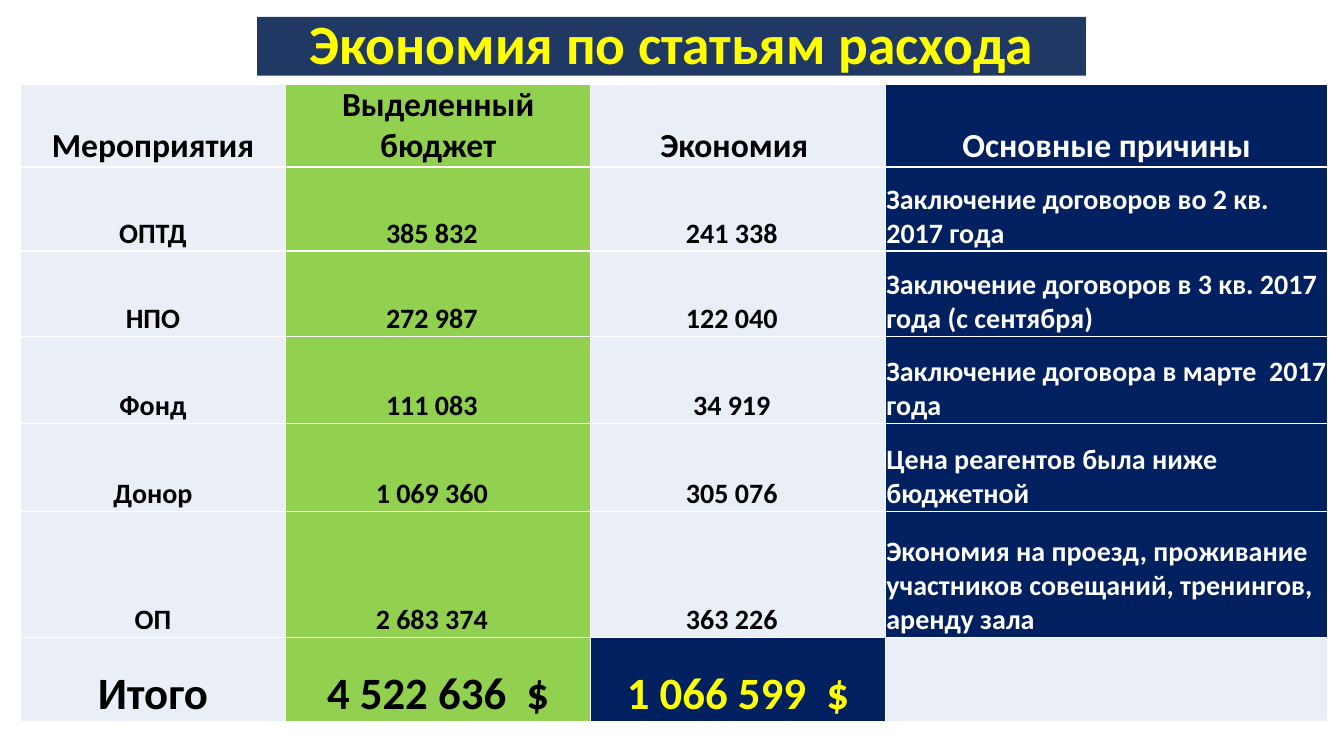
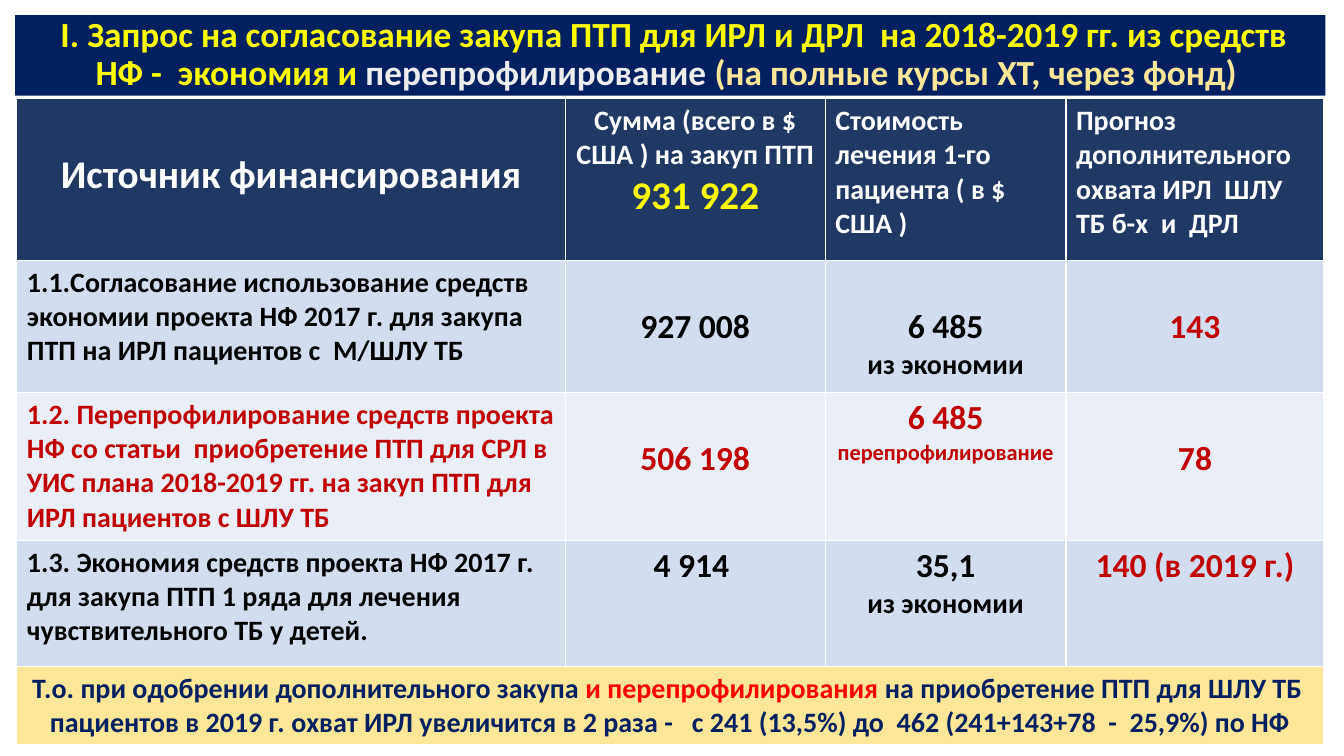
from pptx import Presentation
from pptx.dml.color import RGBColor
from pptx.enum.text import MSO_ANCHOR, MSO_AUTO_SIZE, PP_ALIGN
from pptx.util import Pt


class Theme:
    font = "Calibri"
    navy, slate = "002060", "203864"
    pale, mist = "EAEFF7", "D2DEEF"
    green, sand = "92D050", "FFE699"
    white, grey, black = "FFFFFF", "EDEDED", "000000"
    yellow, red, bright = "FFFF00", "C00000", "FF0000"
    title, long = 39.6, 25.2
    total, large, head, body, small = 32, 28, 24, 20, 16


LEFT, MID = PP_ALIGN.LEFT, PP_ALIGN.CENTER


def write(frame, paras, align):
    for i, runs in enumerate(paras):
        para = frame.paragraphs[0] if i == 0 else frame.add_paragraph()
        para.alignment = align
        for text, size, color in runs:
            run = para.add_run()
            run.text = text
            run.font.name = Theme.font
            run.font.size = Pt(size)
            run.font.bold = True
            run.font.color.rgb = RGBColor.from_string(color)


def build(box, fill, runs, spot, cols, rows):
    slide = deck.slides.add_slide(deck.slide_layouts[5])
    title = slide.shapes.title
    title.left, title.top, title.width, title.height = map(Pt, box)
    title.fill.solid()
    title.fill.fore_color.rgb = RGBColor.from_string(fill)
    frame = title.text_frame
    frame.auto_size = MSO_AUTO_SIZE.NONE
    frame.word_wrap = True
    frame.vertical_anchor = MSO_ANCHOR.MIDDLE
    write(frame, [runs], MID)
    frame.paragraphs[0].line_spacing = 0.9
    area = [*spot, sum(cols), sum(rows)]
    table = slide.shapes.add_table(len(rows), len(cols), *map(Pt, area)).table
    table.horz_banding = False
    for col, width in zip(table.columns, cols):
        col.width = Pt(width)
    for row, height in zip(table.rows, rows):
        row.height = Pt(height)
    return table


deck = Presentation()
deck.slide_width, deck.slide_height = Pt(960), Pt(540)

savings = build(
    (183.6, 12, 592, 42), Theme.slate,
    [("Экономия по статьям расхода", Theme.title, Theme.yellow)],
    (14.5, 60), (189.5, 218, 210.5, 316), (59, 60, 61, 62, 63, 90, 60))
savings.first_row = False

lines = [
    ("Мероприятия", "Выделенный бюджет", "Экономия", "Основные причины"),
    ("ОПТД", "385 832", "241 338", "Заключение договоров во 2 кв. 2017 года"),
    ("НПО", "272 987", "122 040",
     "Заключение договоров в 3 кв. 2017 года (с сентября)"),
    ("Фонд", "111 083", "34 919", "Заключение договора в марте  2017 года"),
    ("Донор", "1 069 360", "305 076", "Цена реагентов была ниже бюджетной"),
    ("ОП", "2 683 374", "363 226",
     "Экономия на проезд, проживание участников совещаний, тренингов, "
     "аренду зала"),
    ("Итого", "4 522 636  $", "1 066 599  $", ""),
]
fills = (Theme.pale, Theme.green, Theme.pale, Theme.navy)
inks = (Theme.black, Theme.black, Theme.black, Theme.white)
last = len(lines) - 1
for r, line in enumerate(lines):
    size = {0: Theme.head, last: Theme.total}.get(r, Theme.body)
    for c, text in enumerate(line):
        fill, ink = fills[c], inks[c]
        if r == last and c == 2:
            fill, ink = Theme.navy, Theme.yellow
        elif r == last and c == 3:
            fill = Theme.pale
        cell = savings.cell(r, c)
        cell.fill.solid()
        cell.fill.fore_color.rgb = RGBColor.from_string(fill)
        cell.vertical_anchor = MSO_ANCHOR.BOTTOM
        cell.margin_left = cell.margin_top = Pt(0.7)
        cell.margin_right = Pt(9.7 if 0 < r < last and c in (1, 2) else 0.7)
        cell.margin_bottom = Pt(0)
        if text:
            side = LEFT if c == 3 and r > 0 else MID
            write(cell.text_frame, [[(text, size, ink)]], side)
savings.cell(0, 2).margin_right = Pt(6.2)

request = build(
    (10.8, 10.8, 936, 57.6), Theme.navy,
    [(" I. Запрос на согласование закупа ПТП для ИРЛ и ДРЛ  на 2018-2019 гг. "
      "из средств НФ -  экономия и ", Theme.long, Theme.yellow),
     ("перепрофилирование ", Theme.long, Theme.grey),
     ("(на полные курсы ХТ, через фонд) ", Theme.long, Theme.sand)],
    (12, 70.5), (391.7, 185.8, 172, 184.3), (115.5, 94.5, 105.5, 90, 56))

W, K, R = Theme.white, Theme.black, Theme.red
B, H, L = Theme.body, Theme.head, Theme.large
plan = [
    (Theme.slate, [
        (MID, L, [("Источник финансирования", L, W)]),
        (MID, 0, [("Сумма (всего в $ США ) на закуп ПТП", B, W),
                  ("931 922", L, Theme.yellow)]),
        (LEFT, 0, [("Стоимость лечения 1-го пациента ( в $ США )", B, W)]),
        (LEFT, 0, [("Прогноз дополнительного охвата ИРЛ  ШЛУ ТБ б-х  и  ДРЛ",
                    B, W)])]),
    (Theme.mist, [
        (LEFT, 0, [("1.1.Согласование использование средств экономии проекта "
                    "НФ 2017 г. для закупа ПТП на ИРЛ пациентов с  М/ШЛУ ТБ",
                    B, K)]),
        (MID, H, [("927 008", H, K)]),
        (MID, H, [("6 485", H, K), ("из экономии", B, K)]),
        (MID, H, [("143", H, R)])]),
    (Theme.pale, [
        (LEFT, 0, [("1.2. Перепрофилирование средств проекта НФ со статьи  "
                    "приобретение ПТП для СРЛ в УИС плана 2018-2019 гг. "
                    "на закуп ПТП для ИРЛ пациентов с ШЛУ ТБ", B, R)]),
        (MID, H, [("506 198", H, R)]),
        (MID, 0, [("6 485", H, R), ("перепрофилирование", Theme.small, R)]),
        (MID, H, [("78", H, R)])]),
    (Theme.mist, [
        (LEFT, 0, [("1.3. Экономия средств проекта НФ 2017 г. для закупа ПТП "
                    "1 ряда для лечения чувствительного ТБ у детей.", B, K)]),
        (MID, 0, [("4 914 ", H, K)]),
        (MID, 0, [("35,1", H, K), ("из экономии", B, K)]),
        (MID, 0, [("140 (в 2019 г.)", H, R)])]),
]
for r, (fill, cells) in enumerate(plan):
    for c, (side, gap, paras) in enumerate(cells):
        cell = request.cell(r, c)
        cell.fill.solid()
        cell.fill.fore_color.rgb = RGBColor.from_string(fill)
        cell.margin_top = Pt(round(3.6 + 1.22 * gap, 1))
        write(cell.text_frame, [[run] for run in paras], side)

note = request.cell(4, 0)
note.merge(request.cell(4, 3))
note.fill.solid()
note.fill.fore_color.rgb = RGBColor.from_string(Theme.sand)
write(note.text_frame, [
    [("Т.о. при одобрении дополнительного закупа ", B, Theme.navy),
     ("и перепрофилирования ", B, Theme.bright),
     ("на приобретение ПТП для ШЛУ ТБ ", B, Theme.navy)],
    [("пациентов в 2019 г. охват ИРЛ увеличится в 2 раза -   с 241 (13,5%) "
      "до  462 (241+143+78  -  25,9%) по НФ", B, Theme.navy)],
], MID)

deck.save("out.pptx")
